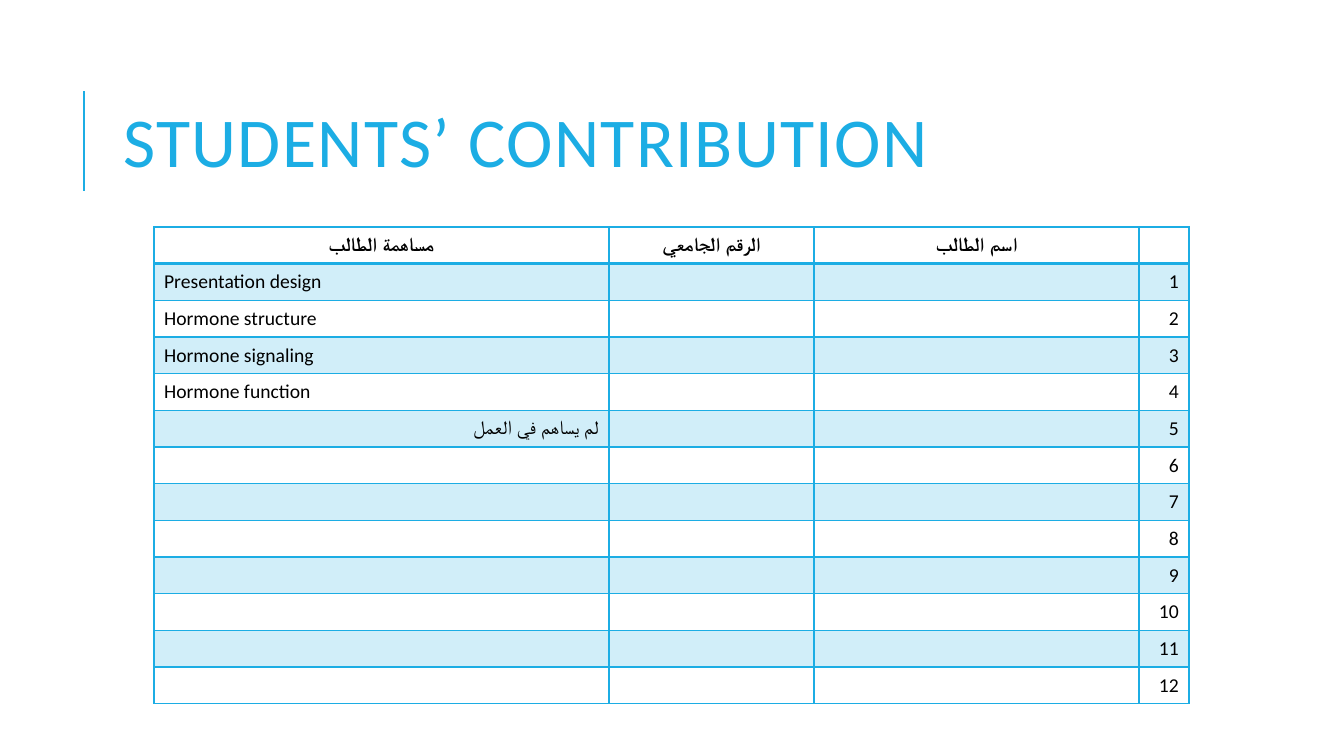
from dataclasses import dataclass

from lxml.etree import SubElement
from pptx import Presentation
from pptx.dml.color import RGBColor
from pptx.enum.shapes import MSO_CONNECTOR as Connector
from pptx.enum.text import MSO_ANCHOR as Anchor, MSO_AUTO_SIZE as AutoSize, PP_ALIGN as Align
from pptx.oxml import parse_xml
from pptx.oxml.ns import nsdecls, qn
from pptx.util import Emu, Pt

PX_PER_INCH = 100.8
FONT = "Calibri"
ACCENT = "1CADE4"
BLACK = "000000"
BAND_ALPHA = 20
STUDENT_COUNT = 12
COLUMN_WIDTHS = (455, 205, 325, 50)
TABLE_HEIGHT = 477
HEADINGS = ("مساهمة الطالب", "الرقم الجامعي", "اسم الطالب", "")
CONTRIBUTIONS = ("Presentation design", "Hormone structure", "Hormone signaling",
                 "Hormone function", "لم يساهم في العمل")


@dataclass
class CellSpec:
    text: str = ""
    align: Align = Align.LEFT
    bold: bool = False
    banded: bool = False
    top: int = 1
    bottom: int = 1


def px(length: int) -> Emu:
    return Emu(round(length * 914400 / PX_PER_INCH))


def colour(hex_value: str) -> RGBColor:
    return RGBColor.from_string(hex_value)


def write(frame, text: str, *, size: int = 14, color: str = BLACK, bold: bool = False,
          align: Align = Align.LEFT, line_spacing: float = 1.0, tracking: int = 0) -> None:
    paragraph = frame.paragraphs[0]
    paragraph.alignment = align
    paragraph.line_spacing = line_spacing
    if not text:
        # An empty cell still needs a text size, or its row grows
        SubElement(paragraph._p, qn("a:endParaRPr"), sz=str(size * 100))
        return
    if any("\u0600" <= letter <= "\u06ff" for letter in text):
        paragraph._p.get_or_add_pPr().set("rtl", "1")
    run = paragraph.add_run()
    run.text = text
    run.font.name = FONT
    run.font.size = Pt(size)
    run.font.bold = bold
    run.font.color.rgb = colour(color)
    if tracking:
        run._r.get_or_add_rPr().set("spc", str(tracking * 100))


def draw_cell(cell, spec: CellSpec) -> None:
    cell.vertical_anchor = Anchor.MIDDLE
    write(cell.text_frame, spec.text, bold=spec.bold, align=spec.align)
    properties = cell._tc.get_or_add_tcPr()
    if spec.banded:
        cell.fill.solid()
        cell.fill.fore_color.rgb = colour(ACCENT)
        tint = properties.find(".//" + qn("a:srgbClr"))
        SubElement(tint, qn("a:alpha"), val=str(BAND_ALPHA * 1000))
    else:
        cell.fill.background()
    # Borders come before the fill
    borders = {"lnL": 1, "lnR": 1, "lnT": spec.top, "lnB": spec.bottom}
    for position, (side, width) in enumerate(borders.items()):
        properties.insert(position, parse_xml(
            f'<a:{side} {nsdecls("a")} w="{Pt(width)}"><a:solidFill>'
            f'<a:srgbClr val="{ACCENT}"/></a:solidFill></a:{side}>'))


def student_row(number: int) -> list[CellSpec]:
    banded = number % 2 == 1
    top = 2 if number == 1 else 1
    contribution = CONTRIBUTIONS[number - 1] if number <= len(CONTRIBUTIONS) else ""
    contribution_align = Align.RIGHT if number == 5 else Align.LEFT
    return [CellSpec(contribution, contribution_align, banded=banded, top=top),
            CellSpec(banded=banded, top=top),
            CellSpec(banded=banded, top=top),
            CellSpec(str(number), Align.RIGHT, banded=banded, top=top)]


def draw_title(slide) -> None:
    # Accent line beside the title
    accent_line = slide.shapes.add_connector(Connector.STRAIGHT, px(84), px(191), px(84), px(91))
    accent_line.line.color.rgb = colour(ACCENT)
    accent_line.line.width = Pt(1.5)
    SubElement(accent_line._element.spPr, qn("a:effectLst"))

    heading = slide.shapes.title
    heading.left, heading.top, heading.width, heading.height = px(113), px(65), px(1072), px(165)
    frame = heading.text_frame
    frame.word_wrap = True
    frame.auto_size = AutoSize.NONE
    frame.vertical_anchor = Anchor.MIDDLE
    write(frame, "STUDENTS’ CONTRIBUTION", size=50, color=ACCENT, line_spacing=0.8, tracking=1)


def draw_contributions(slide) -> None:
    header = [CellSpec(text, Align.CENTER, bold=True, bottom=2) for text in HEADINGS]
    rows = [header] + [student_row(number) for number in range(1, STUDENT_COUNT + 1)]
    table = slide.shapes.add_table(len(rows), len(COLUMN_WIDTHS), px(154), px(227),
                                   px(sum(COLUMN_WIDTHS)), px(TABLE_HEIGHT)).table
    table.first_row = table.horz_banding = False
    for column, width in zip(table.columns, COLUMN_WIDTHS):
        column.width = px(width)
    for row, specs in zip(table.rows, rows):
        for cell, spec in zip(row.cells, specs):
            draw_cell(cell, spec)


def main() -> None:
    deck = Presentation()
    deck.slide_width, deck.slide_height = px(1344), px(756)
    slide = deck.slides.add_slide(deck.slide_layouts[5])
    draw_title(slide)
    draw_contributions(slide)
    deck.save("out.pptx")


if __name__ == "__main__":
    main()
